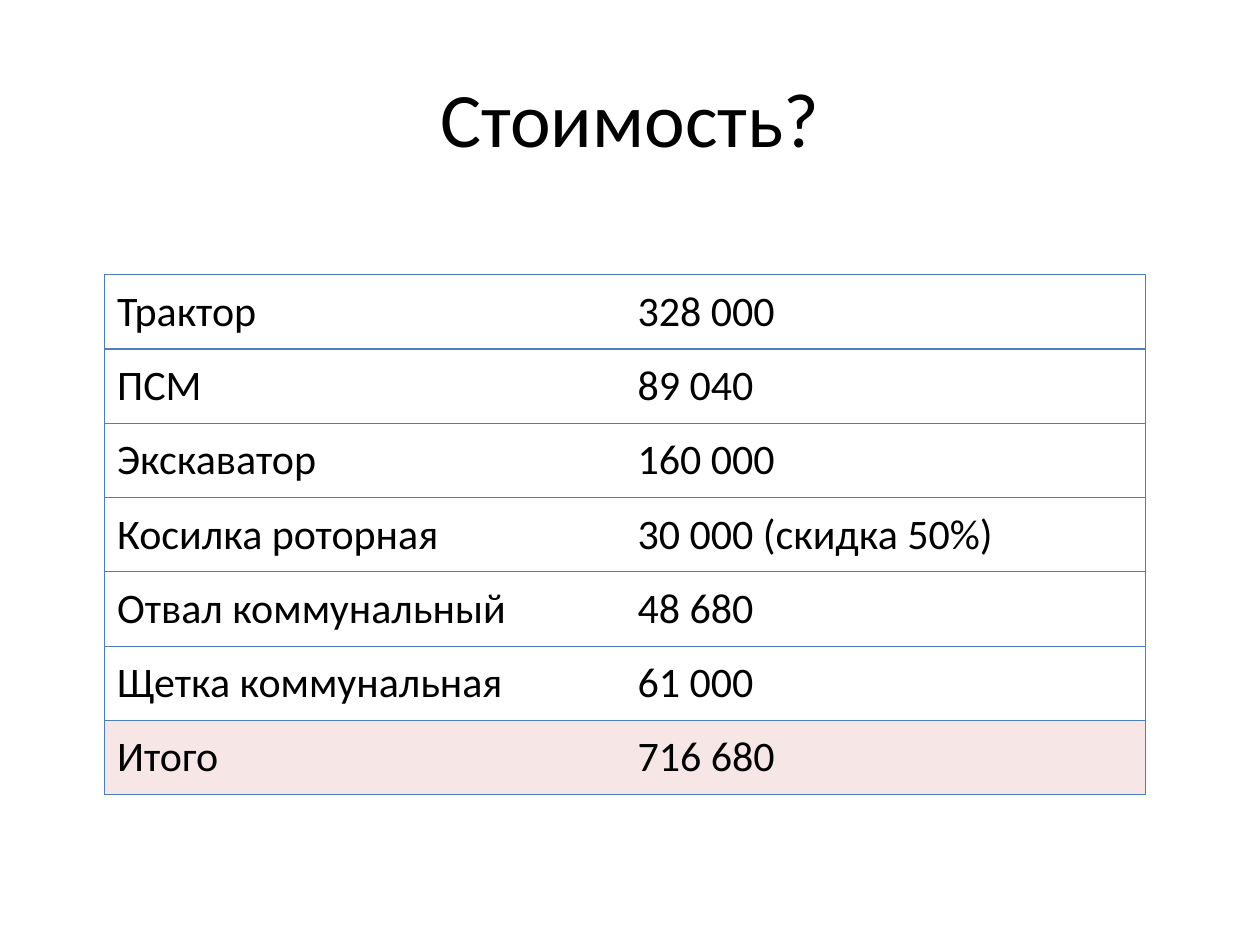
from lxml.etree import SubElement as Sub
from pptx import Presentation
from pptx.dml.color import RGBColor as RGB
from pptx.enum.text import MSO_ANCHOR as Anchor, PP_ALIGN as Align
from pptx.oxml.ns import qn
from pptx.util import Inches, Pt

BLACK = RGB(0x00, 0x00, 0x00)
BLUE = RGB(0x4B, 0x7E, 0xBC)
PINK = RGB(0xF6, 0xE7, 0xE6)

COSTS = [
    ("Трактор", "328 000"),
    ("ПСМ", "89 040"),
    ("Экскаватор", "160 000"),
    ("Косилка роторная", "30 000 (скидка 50%)"),
    ("Отвал коммунальный", "48 680"),
    ("Щетка коммунальная", "61 000"),
    ("Итого", "716 680"),
]


def write(frame, text, size=24, align=Align.LEFT):
    para = frame.paragraphs[0]
    para.alignment = align
    run = para.add_run()
    run.text = text
    run.font.name = "Calibri"
    run.font.size = Pt(size)
    run.font.color.rgb = BLACK


def edge(cell, side, color=None):
    line = Sub(cell._tc.get_or_add_tcPr(), qn("a:ln" + side), w=str(Pt(0.75)))
    if color is None:
        Sub(line, qn("a:noFill"))
    else:
        fill = Sub(line, qn("a:solidFill"))
        Sub(fill, qn("a:srgbClr"), val=str(color))


deck = Presentation()
deck.slide_width, deck.slide_height = Inches(10), Inches(7.5)
slide = deck.slides.add_slide(deck.slide_layouts[5])

title = slide.shapes.title
title.left, title.top = Inches(0.5), Inches(0.3)
title.width, title.height = Inches(9), Inches(1.25)
title.text_frame.vertical_anchor = Anchor.MIDDLE
write(title.text_frame, "Стоимость?", size=44, align=Align.CENTER)

rows, cols = len(COSTS), len(COSTS[0])
col_w, row_h = Inches(4.13), Inches(0.59)
table = slide.shapes.add_table(
    rows, cols, Inches(0.83), Inches(2.18), cols * col_w, rows * row_h
).table
table.first_row = table.horz_banding = False
for col in table.columns:
    col.width = col_w

for r, cost in enumerate(COSTS):
    table.rows[r].height = row_h
    for c, text in enumerate(cost):
        cell = table.cell(r, c)
        cell.vertical_anchor = Anchor.MIDDLE
        write(cell.text_frame, text)
        edge(cell, "L", BLUE if c == 0 else None)
        edge(cell, "R", BLUE if c == cols - 1 else None)
        edge(cell, "T", BLUE)
        edge(cell, "B", BLUE)
        if r == rows - 1:
            cell.fill.solid()
            cell.fill.fore_color.rgb = PINK
        else:
            cell.fill.background()

deck.save("out.pptx")
